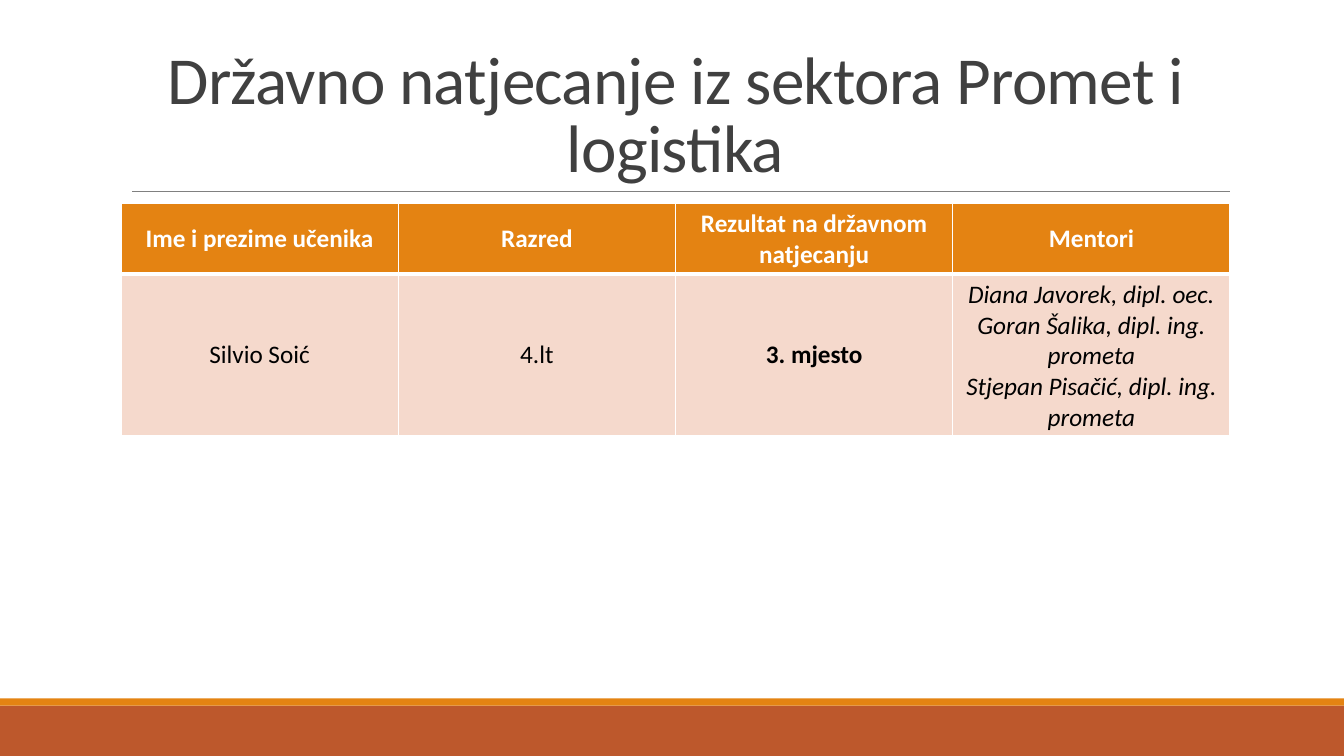
from lxml.etree import SubElement
from pptx import Presentation
from pptx.dml.color import RGBColor
from pptx.enum.shapes import MSO_CONNECTOR, MSO_SHAPE
from pptx.enum.text import MSO_ANCHOR, PP_ALIGN
from pptx.oxml.ns import qn
from pptx.util import Inches, Pt

WHITE = RGBColor(0xFF, 0xFF, 0xFF)
BLACK = RGBColor(0, 0, 0)
DARK = RGBColor(0x40, 0x40, 0x40)
GRAY = RGBColor(0x80, 0x80, 0x80)
RUST = RGBColor(0xBD, 0x58, 0x2C)
ORANGE = RGBColor(0xE4, 0x83, 0x12)
PEACH = RGBColor(0xF5, 0xD9, 0xCC)

WIDTH, HEIGHT = Inches(13.33), Inches(7.5)
LEFT, SPAN = Inches(1.2), Inches(11)

TITLE = "Državno natjecanje iz sektora Promet i logistika"
HEADS = ["Ime i prezime učenika", "Razred",
         "Rezultat na državnom natjecanju", "Mentori"]
ENTRY = ["Silvio Soić", "4.lt", "3. mjesto",
         "Diana Javorek, dipl. oec.\n"
         "Goran Šalika, dipl. ing. prometa\n"
         "Stjepan Pisačić, dipl. ing. prometa"]
RESULT, MENTORS = 2, 3


def style(para, size, color, bold=False, italic=False):
    para.alignment = PP_ALIGN.CENTER
    font = para.font
    font.name, font.size = "Calibri", Pt(size)
    font.bold, font.italic = bold, italic
    font.color.rgb = color


def add_band(slide, top, height, color):
    band = slide.shapes.add_shape(MSO_SHAPE.RECTANGLE, 0, top, WIDTH, height)
    band.shadow.inherit = False
    band.fill.solid()
    band.fill.fore_color.rgb = color
    band.line.fill.background()


def add_footer(slide, top, height):
    """Rust band with a thin orange stripe along its top."""
    stripe = Inches(0.07)
    add_band(slide, top + stripe, height - stripe, RUST)
    add_band(slide, top, stripe, ORANGE)


def add_title(slide, left, top, width, height):
    """Title set on the bottom of its box, with a rule beneath."""
    inset, base = Inches(0.11), top + height
    rule = slide.shapes.add_connector(
        MSO_CONNECTOR.STRAIGHT, left + inset, base, left + width, base)
    rule.line.color.rgb = GRAY
    rule.line.width = Pt(0.5)
    SubElement(rule._element.spPr, qn("a:effectLst"))

    frame = slide.shapes.add_textbox(left, top, width, height).text_frame
    frame.word_wrap = True
    frame.vertical_anchor = MSO_ANCHOR.BOTTOM
    para = frame.paragraphs[0]
    run = para.add_run()
    run.text = TITLE
    run._r.get_or_add_rPr().set("spc", "-50")
    para.line_spacing = 0.85
    style(para, 48, DARK)


def set_edges(cell, widths):
    props = cell._tc.get_or_add_tcPr()
    for side, width in widths.items():
        edge = SubElement(props, qn(f"a:ln{side}"), w=str(Pt(width)))
        fill = SubElement(edge, qn("a:solidFill"))
        SubElement(fill, qn("a:srgbClr"), val=str(WHITE))


def add_results(slide, left, top, width, heights):
    rows = [HEADS, ENTRY]
    table = slide.shapes.add_table(
        len(rows), len(HEADS), left, top, width, sum(heights)).table
    for r, texts in enumerate(rows):
        table.rows[r].height = heights[r]
        head = r == 0
        for c, text in enumerate(texts):
            cell = table.cell(r, c)
            set_edges(cell, {"L": 1, "R": 1, "T": 1 if head else 3,
                             "B": 3 if head else 1})
            cell.fill.solid()
            cell.fill.fore_color.rgb = ORANGE if head else PEACH
            cell.vertical_anchor = MSO_ANCHOR.MIDDLE
            cell.text = text
            for para in cell.text_frame.paragraphs:
                style(para, 18, WHITE if head else BLACK,
                      bold=head or c == RESULT,
                      italic=not head and c == MENTORS)


def main():
    deck = Presentation()
    deck.slide_width, deck.slide_height = WIDTH, HEIGHT
    slide = deck.slides.add_slide(deck.slide_layouts[6])
    foot = Inches(0.57)
    add_footer(slide, HEIGHT - foot, foot)
    add_title(slide, LEFT, Inches(0.31), SPAN, Inches(1.59))
    add_results(slide, LEFT, Inches(2.02), SPAN, [Inches(0.7), Inches(1.6)])
    deck.save("out.pptx")


if __name__ == "__main__":
    main()
